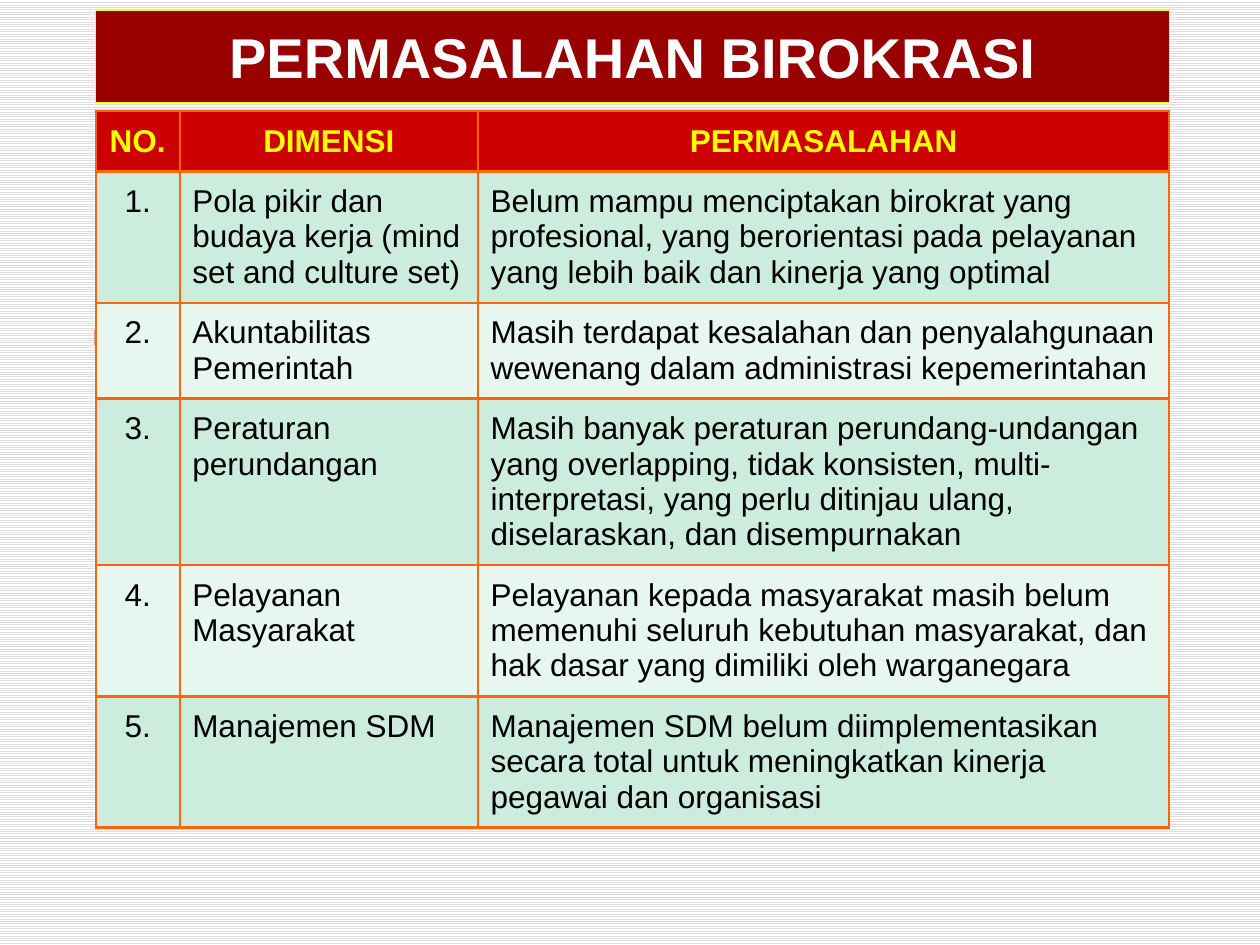
from lxml import etree
from pptx import Presentation
from pptx.dml.color import RGBColor
from pptx.enum.dml import MSO_PATTERN
from pptx.enum.shapes import MSO_CONNECTOR, MSO_SHAPE
from pptx.enum.text import MSO_ANCHOR, MSO_AUTO_SIZE, PP_ALIGN
from pptx.oxml.ns import qn
from pptx.util import Pt

CENTER, LEFT = PP_ALIGN.CENTER, PP_ALIGN.LEFT
MIDDLE, NO_FIT = MSO_ANCHOR.MIDDLE, MSO_AUTO_SIZE.NONE
RECTANGLE, STRAIGHT = MSO_SHAPE.RECTANGLE, MSO_CONNECTOR.STRAIGHT
STRIPES = MSO_PATTERN.LIGHT_HORIZONTAL

TITLE = "PERMASALAHAN BIROKRASI"
HEADER = ("NO.", "DIMENSI", "PERMASALAHAN")
PROBLEMS = [
    ("Pola pikir dan budaya kerja (mind set and culture set)",
     "Belum mampu menciptakan birokrat yang profesional, yang berorientasi "
     "pada pelayanan yang lebih baik dan kinerja yang optimal"),
    ("Akuntabilitas Pemerintah",
     "Masih terdapat kesalahan dan penyalahgunaan wewenang dalam "
     "administrasi kepemerintahan"),
    ("Peraturan perundangan",
     "Masih banyak peraturan perundang-undangan yang overlapping, tidak "
     "konsisten, multi-interpretasi, yang perlu ditinjau ulang, "
     "diselaraskan, dan disempurnakan"),
    ("Pelayanan Masyarakat",
     "Pelayanan kepada masyarakat masih belum memenuhi seluruh kebutuhan "
     "masyarakat, dan hak dasar yang dimiliki oleh warganegara"),
    ("Manajemen SDM",
     "Manajemen SDM belum diimplementasikan secara total untuk "
     "meningkatkan kinerja pegawai dan organisasi"),
]
LINES_PER_ROW = (1, 3, 2, 4, 3, 3)

THEME = {
    "stripe": "DDDDDD", "paper": "FFFFFF",
    "banner": "990000", "banner_line": "FFFF00",
    "accent": "CC0000", "border": "FF6600",
    "bands": ("CCEDDE", "E7F6EF"),
    "title": {"name": "Arial", "size": 32, "bold": True, "color": "FFFFFF"},
    "header": {"name": "Arial", "size": 18, "bold": True, "color": "FFFF00"},
    "body": {"name": "Arial", "size": 18, "bold": False, "color": "000000"},
}

SLIDE_SIZE = (720, 540)
TABLE_LEFT, TABLE_TOP = 54.7, 63.4
COLUMN_WIDTHS = (48, 170.5, 395)
TABLE_WIDTH = sum(COLUMN_WIDTHS)
LINE_HEIGHT, CELL_INSET, BORDER_WIDTH = 20.2, 7.2, 1.5
ROW_HEIGHTS = [n * LINE_HEIGHT + 2 * CELL_INSET for n in LINES_PER_ROW]
BANNER_TOP, BANNER_HEIGHT = 5.8, 52.6
RULE_LEFT, RULE_TOP, RULE_RIGHT = 54, 188.6, 666
RULE_BAR = (378, 8.6)


def rgb(value):
    return RGBColor.from_string(value)


def paint(fill, color):
    fill.solid()
    fill.fore_color.rgb = rgb(color)


def write(frame, text, style, align):
    frame.text = text
    para = frame.paragraphs[0]
    para.alignment = align
    font = para.runs[0].font
    values = {**style, "size": Pt(style["size"])}
    font.color.rgb = rgb(values.pop("color"))
    for name, value in values.items():
        setattr(font, name, value)


def add_borders(cell):
    properties = cell._tc.get_or_add_tcPr()
    for side in ("a:lnL", "a:lnR", "a:lnT", "a:lnB"):
        line = etree.SubElement(properties, qn(side), w=str(Pt(BORDER_WIDTH)))
        fill = etree.SubElement(line, qn("a:solidFill"))
        etree.SubElement(fill, qn("a:srgbClr"), val=THEME["border"])


def add_rule(slide):
    """Red bar with a thin line along its top, behind the table."""
    bar = slide.shapes.add_shape(RECTANGLE, Pt(RULE_LEFT), Pt(RULE_TOP),
                                 *map(Pt, RULE_BAR))
    bar.shadow.inherit = False
    paint(bar.fill, THEME["accent"])
    bar.line.fill.background()
    rule = slide.shapes.add_connector(STRAIGHT, Pt(RULE_LEFT), Pt(RULE_TOP),
                                      Pt(RULE_RIGHT), Pt(RULE_TOP))
    rule.line.color.rgb = rgb(THEME["accent"])
    rule.line.width = Pt(0.75)
    etree.SubElement(rule._element.spPr, qn("a:effectLst"))


def add_problem_table(slide):
    rows = [HEADER] + [(f"{number}.", *problem)
                       for number, problem in enumerate(PROBLEMS, 1)]
    table = slide.shapes.add_table(
        len(rows), len(HEADER), Pt(TABLE_LEFT), Pt(TABLE_TOP),
        Pt(TABLE_WIDTH), Pt(sum(ROW_HEIGHTS))).table
    table.first_row = table.horz_banding = False
    for column, width in zip(table.columns, COLUMN_WIDTHS):
        column.width = Pt(width)
    for row, height in zip(table.rows, ROW_HEIGHTS):
        row.height = Pt(height)
    for r, texts in enumerate(rows):
        is_header = r == 0
        style = THEME["header" if is_header else "body"]
        color = THEME["accent"] if is_header else THEME["bands"][(r - 1) % 2]
        for c, text in enumerate(texts):
            cell = table.cell(r, c)
            for side in ("left", "right", "top", "bottom"):
                setattr(cell, f"margin_{side}", Pt(CELL_INSET))
            write(cell.text_frame, text, style,
                  CENTER if is_header or c == 0 else LEFT)
            add_borders(cell)
            paint(cell.fill, color)


def format_banner(slide):
    banner = slide.shapes.title
    place = {"left": TABLE_LEFT, "top": BANNER_TOP,
             "width": TABLE_WIDTH, "height": BANNER_HEIGHT}
    for name, value in place.items():
        setattr(banner, name, Pt(value))
    paint(banner.fill, THEME["banner"])
    banner.line.color.rgb = rgb(THEME["banner_line"])
    banner.line.width = Pt(0.75)
    frame = banner.text_frame
    frame.word_wrap, frame.auto_size = True, NO_FIT
    frame.vertical_anchor = MIDDLE
    write(frame, TITLE, THEME["title"], CENTER)


def main():
    deck = Presentation()
    deck.slide_width, deck.slide_height = map(Pt, SLIDE_SIZE)
    slide = deck.slides.add_slide(deck.slide_layouts.get_by_name("Title Only"))
    backdrop = slide.background.fill
    backdrop.patterned()
    backdrop.pattern = STRIPES
    backdrop.fore_color.rgb = rgb(THEME["stripe"])
    backdrop.back_color.rgb = rgb(THEME["paper"])
    add_rule(slide)
    add_problem_table(slide)
    format_banner(slide)
    deck.save("out.pptx")


if __name__ == "__main__":
    main()
